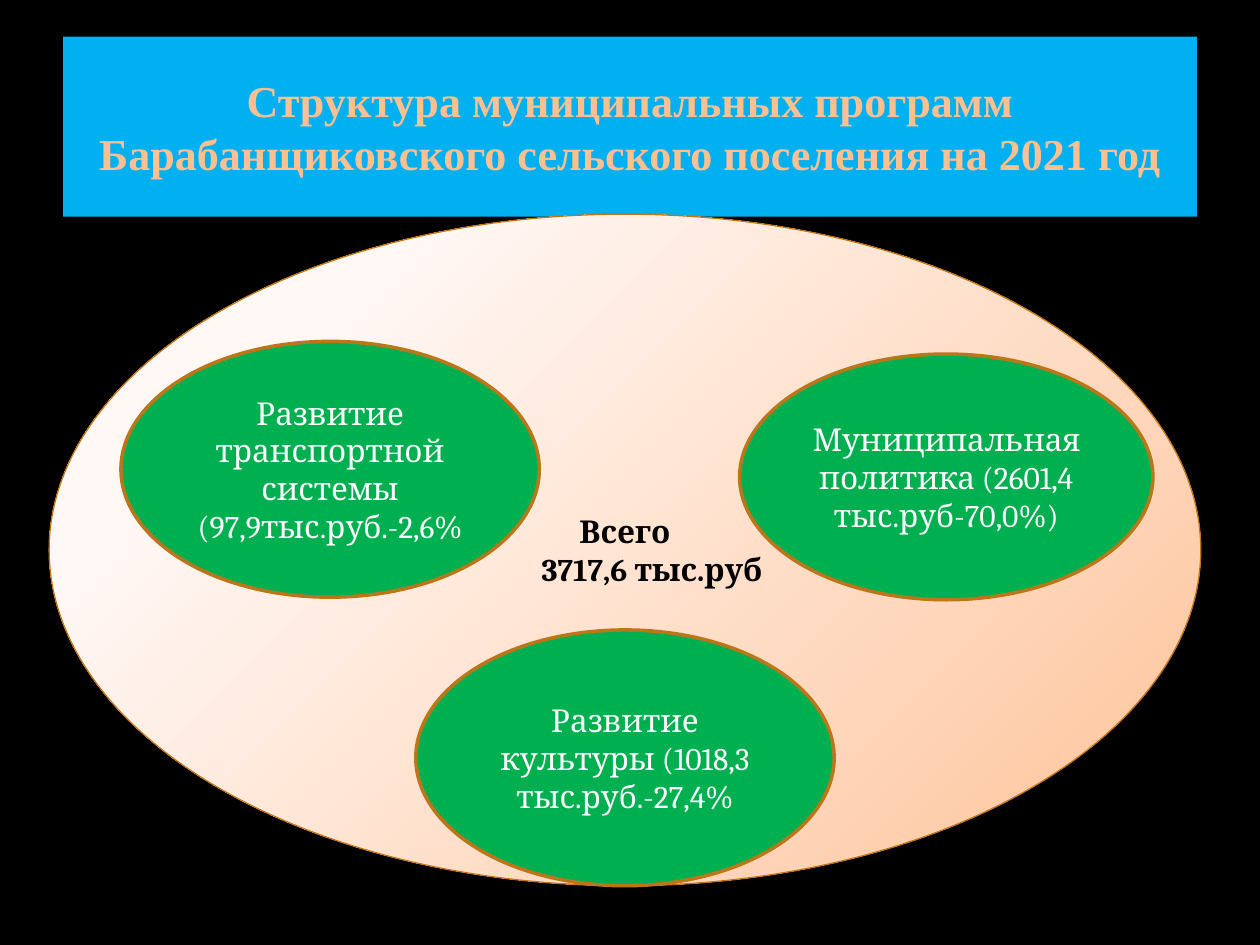
from lxml import etree
from pptx import Presentation
from pptx.dml.color import RGBColor
from pptx.enum import shapes, text
from pptx.oxml.ns import qn
from pptx.util import Inches, Pt

BLACK = RGBColor(0x00, 0x00, 0x00)
WHITE = RGBColor(0xFF, 0xFF, 0xFF)
SKY = RGBColor(0x00, 0xB0, 0xF0)
PEACH = RGBColor(0xFF, 0xC0, 0x91)
CREAM = RGBColor(0xFF, 0xF8, 0xF5)
APRICOT = RGBColor(0xFE, 0xC3, 0x99)
GREEN = RGBColor(0x00, 0xB0, 0x50)
BRONZE = RGBColor(0xC0, 0x75, 0x12)
BROWN = RGBColor(0xBB, 0x76, 0x1A)


def write(shape, lines, **font_values):
    """Fill a shape with centred paragraphs that share one font format."""
    frame = shape.text_frame
    frame.text = "\n".join(lines)
    frame.word_wrap = True
    frame.auto_size = text.MSO_AUTO_SIZE.NONE
    frame.vertical_anchor = text.MSO_ANCHOR.MIDDLE
    color = font_values.pop("color")
    for paragraph in frame.paragraphs:
        paragraph.alignment = text.PP_ALIGN.CENTER
        font = paragraph.runs[0].font
        font.color.rgb = color
        for name, value in font_values.items():
            setattr(font, name, value)


def add_ellipse(box, line_color, line_width):
    ellipse = slide.shapes.add_shape(
        shapes.MSO_SHAPE.OVAL, *[Inches(length) for length in box])
    ellipse.shadow.inherit = False
    ellipse.line.color.rgb = line_color
    ellipse.line.width = Pt(line_width)
    return ellipse


prs = Presentation()
prs.slide_width, prs.slide_height = Inches(10), Inches(7.5)
slide = prs.slides.add_slide(prs.slide_layouts[5])
slide.background.fill.solid()
slide.background.fill.fore_color.rgb = BLACK

title = slide.shapes.title
placement = {"left": 0.5, "top": 0.29, "width": 9, "height": 1.43}
for side, length in placement.items():
    setattr(title, side, Inches(length))
title.fill.solid()
title.fill.fore_color.rgb = SKY
write(title,
      ["Структура муниципальных программ Барабанщиковского сельского поселения на 2021 год"],
      name="Times New Roman", size=Pt(25.2), bold=True, color=PEACH)

# The total budget, shaded from the top left corner outwards
total = add_ellipse((0.39, 1.7, 9.14, 5.33), BRONZE, 0.75)
total.fill.gradient()
for stop, (position, color) in zip(total.fill.gradient_stops,
                                   [(0.2, CREAM), (1, APRICOT)]):
    stop.position = position
    stop.color.rgb = color
gradient = total._element.spPr.find(qn("a:gradFill"))
gradient.remove(gradient.find(qn("a:lin")))
radial = etree.SubElement(gradient, qn("a:path"), path="circle")
etree.SubElement(radial, qn("a:fillToRect"),
                 l="-15000", t="-15000", r="115000", b="115000")
write(total, ["Всего", "3717,6 тыс.руб"],
      name="Cambria", size=Pt(18), bold=True, color=BLACK)
amount = total.text_frame.paragraphs[1]
amount._p.get_or_add_pPr().set("marL", str(Inches(0.43)))

programmes = [
    ("Муниципальная политика (2601,4 тыс.руб-70,0%)", (5.87, 2.81, 3.28, 1.95)),
    ("Развитие транспортной системы (97,9тыс.руб.-2,6%", (0.96, 2.71, 3.32, 2.03)),
    ("Развитие культуры (1018,3 тыс.руб.-27,4%", (3.3, 5, 3.32, 2.03)),
]
for label, box in programmes:
    programme = add_ellipse(box, BROWN, 2)
    programme.fill.solid()
    programme.fill.fore_color.rgb = GREEN
    write(programme, [label], name="Cambria", size=Pt(18), color=WHITE)
    # Narrow side margins keep the longest word on one line
    for margin in ("margin_left", "margin_right"):
        setattr(programme.text_frame, margin, Inches(0.05))

prs.save("out.pptx")
